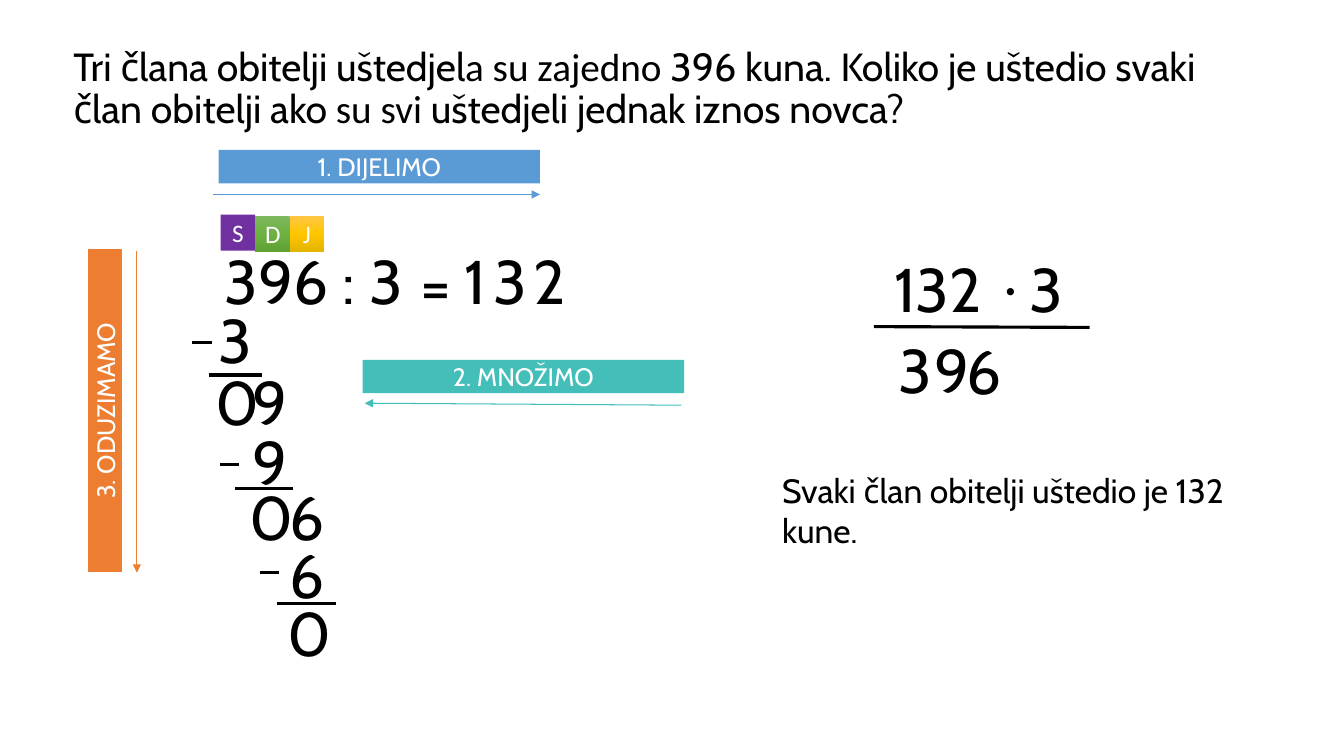
from copy import deepcopy
from dataclasses import dataclass

from lxml import etree
from pptx import Presentation
from pptx.dml.color import RGBColor
from pptx.enum.shapes import MSO_CONNECTOR, MSO_SHAPE
from pptx.enum.text import MSO_ANCHOR, PP_ALIGN
from pptx.oxml.ns import qn
from pptx.util import Cm, Pt

STRAIGHT = MSO_CONNECTOR.STRAIGHT
RECTANGLE = MSO_SHAPE.RECTANGLE
MIDDLE, TOP = MSO_ANCHOR.MIDDLE, MSO_ANCHOR.TOP
CENTER, LEFT = PP_ALIGN.CENTER, PP_ALIGN.LEFT


@dataclass(frozen=True)
class Theme:
    font: str = "Cabin"
    second_font: str = "Calibri"
    ink: str = "000000"
    white: str = "FFFFFF"
    divide: str = "5B9BD5"
    multiply: str = "43BEB9"
    subtract: str = "ED7D31"
    hundreds: tuple = ("7030A0",)
    tens: tuple = ("7FB75F", "6EB141", "5FA134")
    ones: tuple = ("FFC647", "FFC600", "E3B400")
    title_size: int = 28
    digit_size: int = 44
    answer_size: int = 24
    label_size: int = 18
    rule_width: float = 2.25
    arrow_width: float = 0.75


theme = Theme()


def write(shape, pieces, size, color=theme.ink, align=CENTER, anchor=MIDDLE, spacing=0.9):
    """Fill a shape with one paragraph made of (text, font) pieces."""
    frame = shape.text_frame
    frame.word_wrap = True
    frame.vertical_anchor = anchor
    paragraph = frame.paragraphs[0]
    paragraph.alignment = align
    paragraph.line_spacing = spacing
    for text, font in pieces:
        run = paragraph.add_run()
        run.text = text
        run.font.name = font
        run.font.size = Pt(size)
        run.font.color.rgb = RGBColor.from_string(color)


def draw_line(x1, y1, x2, y2, color=theme.ink, width=theme.rule_width, arrow=False):
    line = slide.shapes.add_connector(STRAIGHT, Cm(x1), Cm(y1), Cm(x2), Cm(y2))
    line.line.color.rgb = RGBColor.from_string(color)
    line.line.width = Pt(width)
    if arrow:
        etree.SubElement(line.line._get_or_add_ln(), qn("a:tailEnd"), type="triangle")
    etree.SubElement(line._element.spPr, qn("a:effectLst"))


presentation = Presentation()
presentation.slide_width, presentation.slide_height = Cm(33.87), Cm(19.05)
slide = presentation.slides.add_slide(presentation.slide_layouts[6])

# The question
question = slide.shapes.add_textbox(Cm(1.6), Cm(0.43), Cm(29.87), Cm(3.68))
question_pieces = [
    ("Tri člana obitelji uštedjel", theme.font),
    ("a su zajedno", theme.second_font),
    (" 396 kuna. Koliko je uštedio svaki član obitelji ako ", theme.font),
    ("su svi", theme.second_font),
    (" uštedjeli jednak iznos novca?", theme.font),
]
write(question, question_pieces, theme.title_size, align=LEFT)

# Long division, with one column for each place value, and the check
hundreds_x, tens_x, ones_x = 5.17, 6.05, 6.99
digit_w, digit_h = 1.5, 3.68
equation_y = 5.33
digits = [
    ("396\u00a0: 3", 4.85, equation_y, 6.12, digit_h),
    ("=", 10.24, 5.44, digit_w, digit_h),
    ("1", 11.23, equation_y, digit_w, digit_h),
    ("3", 12.12, equation_y, digit_w, digit_h),
    ("2", 13.11, equation_y, digit_w, digit_h),
    ("3", hundreds_x, 6.83, digit_w, digit_h),
    ("0", hundreds_x, 8.38, digit_w, digit_h),
    ("9", tens_x, 8.38, digit_w, digit_h),
    ("9", tens_x, 9.88, digit_w, digit_h),
    ("0", tens_x, 11.27, digit_w, digit_h),
    ("6", ones_x, 11.27, digit_w, digit_h),
    ("6", ones_x, 12.73, digit_w, digit_h),
    ("0", ones_x, 14.2, digit_w, digit_h),
    ("132", 22.05, 6.58, 3.18, 1.57),
    ("•", 24.79, 6.45, 1.35, 1.75),
    ("3", 24.79, 6.71, 3.18, 1.3),
    ("3", 22.4, 7.58, 0.97, digit_h),
    ("9", 23.29, 7.58, 0.97, digit_h),
    ("6", 24.1, 7.6, 1.04, digit_h),
]
for text, x, y, width, height in digits:
    digit = slide.shapes.add_textbox(Cm(x), Cm(y), Cm(width), Cm(height))
    size = theme.answer_size if text == "•" else theme.digit_size
    write(digit, [(text, theme.font)], size)

# Rules under the subtractions, minus signs, rule under the product
for x1, y1, x2, y2 in [
    (5.26, 9.45, 6.6, 9.45),
    (5.92, 12.32, 7.39, 12.32),
    (6.99, 15.21, 8.46, 15.21),
    (4.83, 8.64, 5.33, 8.64),
    (5.54, 11.71, 6.02, 11.71),
    (6.55, 14.43, 7.04, 14.43),
    (22.02, 8.23, 27.46, 8.25),
]:
    draw_line(x1, y1, x2, y2)

# Place values
place_w = 0.87
places = [("S", 5.41, theme.hundreds), ("D", 5.44, theme.tens), ("J", 5.44, theme.ones)]
for column, (letter, y, colors) in enumerate(places):
    place = slide.shapes.add_shape(
        RECTANGLE, Cm(5.56 + column * place_w), Cm(y), Cm(place_w), Cm(0.91))
    place.shadow.inherit = False
    place.line.fill.background()
    if len(colors) == 1:
        place.fill.solid()
        place.fill.fore_color.rgb = RGBColor.from_string(colors[0])
    else:
        place.fill.gradient()
        place.fill.gradient_angle = 270
        stop_list = place._element.spPr.find(qn("a:gradFill")).find(qn("a:gsLst"))
        stop_list.insert(1, deepcopy(stop_list[0]))
        for stop, color, position in zip(place.fill.gradient_stops, colors, (0, 0.5, 1)):
            stop.color.rgb = RGBColor.from_string(color)
            stop.position = position
    write(place, [(letter, theme.second_font)], theme.label_size, theme.white, spacing=1)

# Steps, each a bar with an arrow
steps = [
    ("1. DIJELIMO", 5.51, 3.78, 0, theme.divide, (5.38, 4.9, 13.61, 4.9)),
    ("2. MNOŽIMO", 9.14, 9.07, 0, theme.multiply, (17.17, 10.21, 9.19, 10.16)),
    ("3. ODUZIMAMO", -1.4, 9.93, 270, theme.subtract, (3.45, 6.32, 3.45, 14.43)),
]
for label, x, y, rotation, color, arrow_ends in steps:
    bar = slide.shapes.add_shape(RECTANGLE, Cm(x), Cm(y), Cm(8.1), Cm(0.84))
    bar.rotation = rotation
    bar.shadow.inherit = False
    bar.fill.solid()
    bar.fill.fore_color.rgb = RGBColor.from_string(color)
    if rotation:
        bar.line.color.rgb = RGBColor.from_string(color)
        bar.line.width = Pt(1)
    else:
        bar.line.fill.background()
    write(bar, [(label, theme.font)], theme.label_size, theme.white, spacing=1)
    draw_line(*arrow_ends, color=color, width=theme.arrow_width, arrow=True)

# The answer
answer = slide.shapes.add_textbox(Cm(19.46), Cm(11.71), Cm(12.04), Cm(2.31))
write(answer, [("Svaki član obitelji uštedio je 132 kune.", theme.font)],
      theme.answer_size, align=LEFT, anchor=TOP, spacing=1)

presentation.save("out.pptx")
